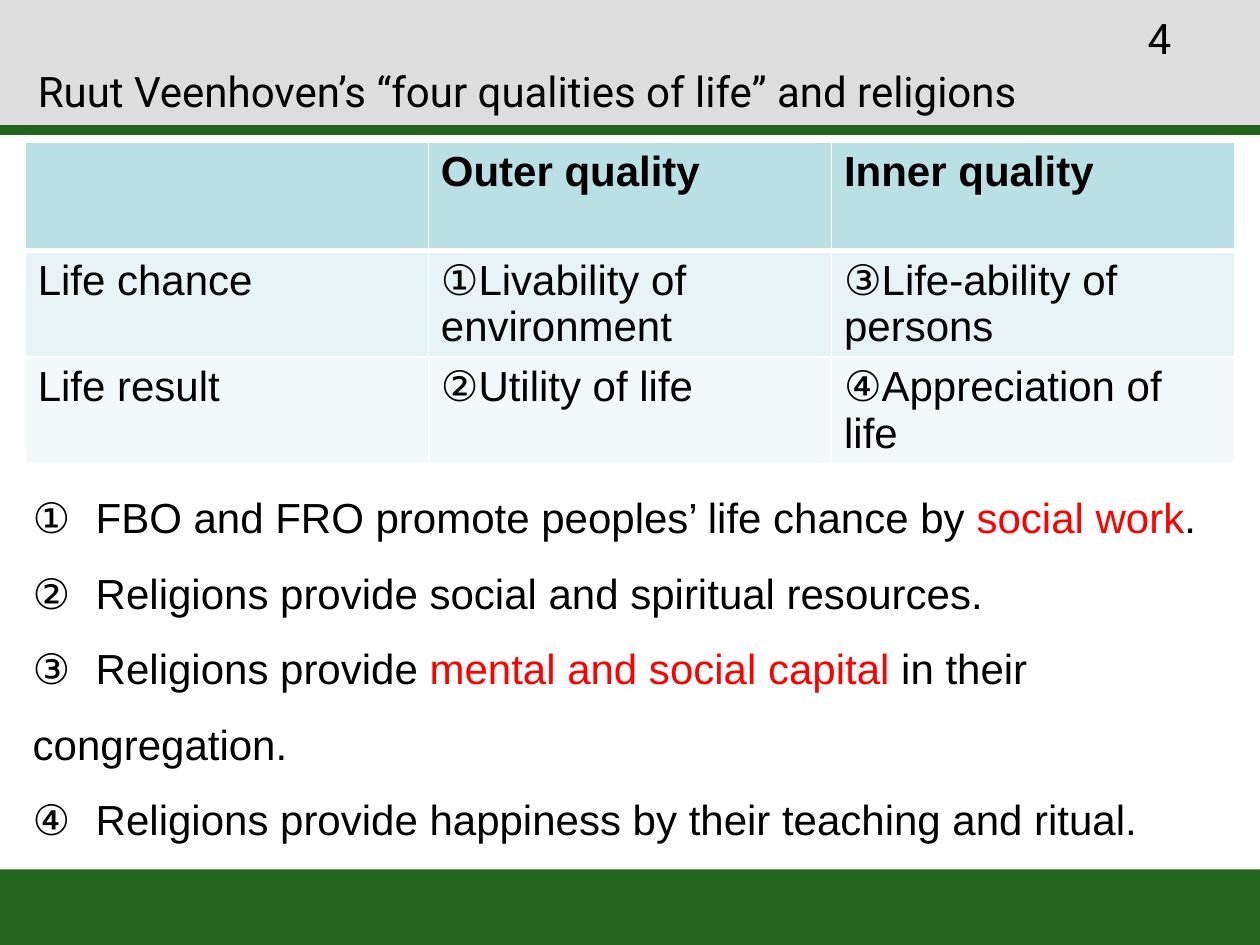
from lxml.etree import SubElement as Sub
from pptx import Presentation
from pptx.dml.color import RGBColor
from pptx.enum.shapes import MSO_SHAPE as Shape
from pptx.enum.text import MSO_ANCHOR as Anchor, MSO_AUTO_SIZE as Fit, PP_ALIGN as Align
from pptx.oxml.ns import qn
from pptx.util import Inches, Pt

GREEN = RGBColor(0x23, 0x65, 0x1C)
GRAY = RGBColor(0xDD, 0xDD, 0xDD)
BLACK = RGBColor(0, 0, 0)
RED = RGBColor(0xFF, 0, 0)
WHITE = RGBColor(0xFF, 0xFF, 0xFF)
TINTS = [RGBColor(0xBB, 0xE0, 0xE3), RGBColor(0xE7, 0xF3, 0xF4),
         RGBColor(0xF3, 0xF9, 0xFA)]

HEAD = dict(name="Roboto", size=Pt(24), bold=False)
TEXT = dict(HEAD, name="Arial")

GRID = [
    ["", "Outer quality", "Inner quality"],
    ["Life chance", "①Livability of environment", "③Life-ability of persons"],
    ["Life result", "②Utility of life", "④Appreciation of life"],
]
# Each item: number, tab stop, then runs of (text, colour)
ITEMS = [
    ("①", 0.75, [("FBO and FRO promote peoples’ life chance by ", BLACK),
                 ("social work", RED), (".", BLACK)]),
    ("②", 0.75, [("Religions provide social and spiritual resources.", BLACK)]),
    ("③", 0.75, [("Religions provide ", BLACK),
                 ("mental and social capital ", RED),
                 ("in their congregation.", BLACK)]),
    ("④", 0.48, [("Religions provide happiness by their teaching and ritual.",
                  BLACK)]),
]


def place(shape, box):
    for key, val in zip(("left", "top", "width", "height"), box):
        setattr(shape, key, Inches(val))


def style(font, form, color=BLACK):
    for key, val in form.items():
        setattr(font, key, val)
    font.color.rgb = color


def add_run(para, text, form, color=BLACK):
    run = para.add_run()
    run.text = text
    style(run.font, form, color)


def add_band(slide, box, color):
    band = slide.shapes.add_shape(Shape.RECTANGLE, *map(Inches, box))
    band.shadow.inherit = False
    band.fill.solid()
    band.fill.fore_color.rgb = color
    band.line.fill.background()
    # Bands lie behind the placeholders
    band.element.getparent().insert(2, band.element)


def add_title(slide, box):
    title = slide.shapes.title
    place(title, box)
    frame = title.text_frame
    frame.auto_size = Fit.NONE
    frame.vertical_anchor = Anchor.MIDDLE
    para = frame.paragraphs[0]
    para.alignment = Align.LEFT
    add_run(para, "Ruut Veenhoven’s “four qualities of life” and religions", HEAD)


def add_number(slide, box):
    frame = slide.shapes.add_textbox(*map(Inches, box)).text_frame
    frame.word_wrap = True
    add_run(frame.paragraphs[0], "4", HEAD)


def add_edge(cell, side, width):
    line = Sub(cell._tc.get_or_add_tcPr(), qn("a:ln" + side), w=str(Pt(width)))
    fill = Sub(line, qn("a:solidFill"))
    Sub(fill, qn("a:srgbClr"), val=str(WHITE))


def add_grid(slide, box, heights):
    table = slide.shapes.add_table(len(GRID), len(GRID[0]),
                                   *map(Inches, box)).table
    for col in table.columns:
        col.width = Inches(box[2] / len(GRID[0]))
    for r, (words, high) in enumerate(zip(GRID, heights)):
        table.rows[r].height = Inches(high)
        for c, word in enumerate(words):
            cell = table.cell(r, c)
            # A thick rule runs below the header row
            edges = dict(L=1, R=1, T=3 if r == 1 else 1, B=3 if r == 0 else 1)
            for side, width in edges.items():
                add_edge(cell, side, width)
            cell.fill.solid()
            cell.fill.fore_color.rgb = TINTS[r]
            para = cell.text_frame.paragraphs[0]
            para.alignment = Align.LEFT
            form = dict(TEXT, bold=r == 0)
            if word:
                add_run(para, word, form)
            else:
                style(para.font, form)


def add_list(slide, box):
    body = slide.placeholders[1]
    place(body, box)
    frame = body.text_frame
    frame.auto_size = Fit.NONE
    frame.vertical_anchor = Anchor.TOP
    for i, (mark, stop, runs) in enumerate(ITEMS):
        para = frame.add_paragraph() if i else frame.paragraphs[0]
        para.alignment = Align.LEFT
        para.line_spacing = 1.5
        para.space_before = Pt(0)
        # No bullet or indent; a tab sets off the number
        props = para._p.get_or_add_pPr()
        props.set("marL", "0")
        props.set("indent", "0")
        Sub(props, qn("a:buNone"))
        tabs = Sub(props, qn("a:tabLst"))
        Sub(tabs, qn("a:tab"), pos=str(Inches(stop)), algn="l")
        add_run(para, mark + "\t", TEXT)
        for text, color in runs:
            add_run(para, text, TEXT, color)


def main():
    prs = Presentation()
    prs.slide_width, prs.slide_height = Inches(10), Inches(7.5)
    slide = prs.slides.add_slide(prs.slide_layouts[1])
    # Header and footer bands
    add_band(slide, (0, 6.9, 10, 0.6), GREEN)
    add_band(slide, (0, 0, 10, 0.99), GRAY)
    add_band(slide, (0, 0.99, 10, 0.08), GREEN)
    # Content
    add_title(slide, (0.2, 0.44, 8.27, 0.56))
    add_grid(slide, (0.2, 1.13, 9.6, 2.54), (0.86, 0.84, 0.84))
    add_number(slide, (9.01, 0.05, 0.88, 0.53))
    add_list(slide, (0.16, 3.65, 9.69, 3.13))
    prs.save("out.pptx")


if __name__ == "__main__":
    main()
